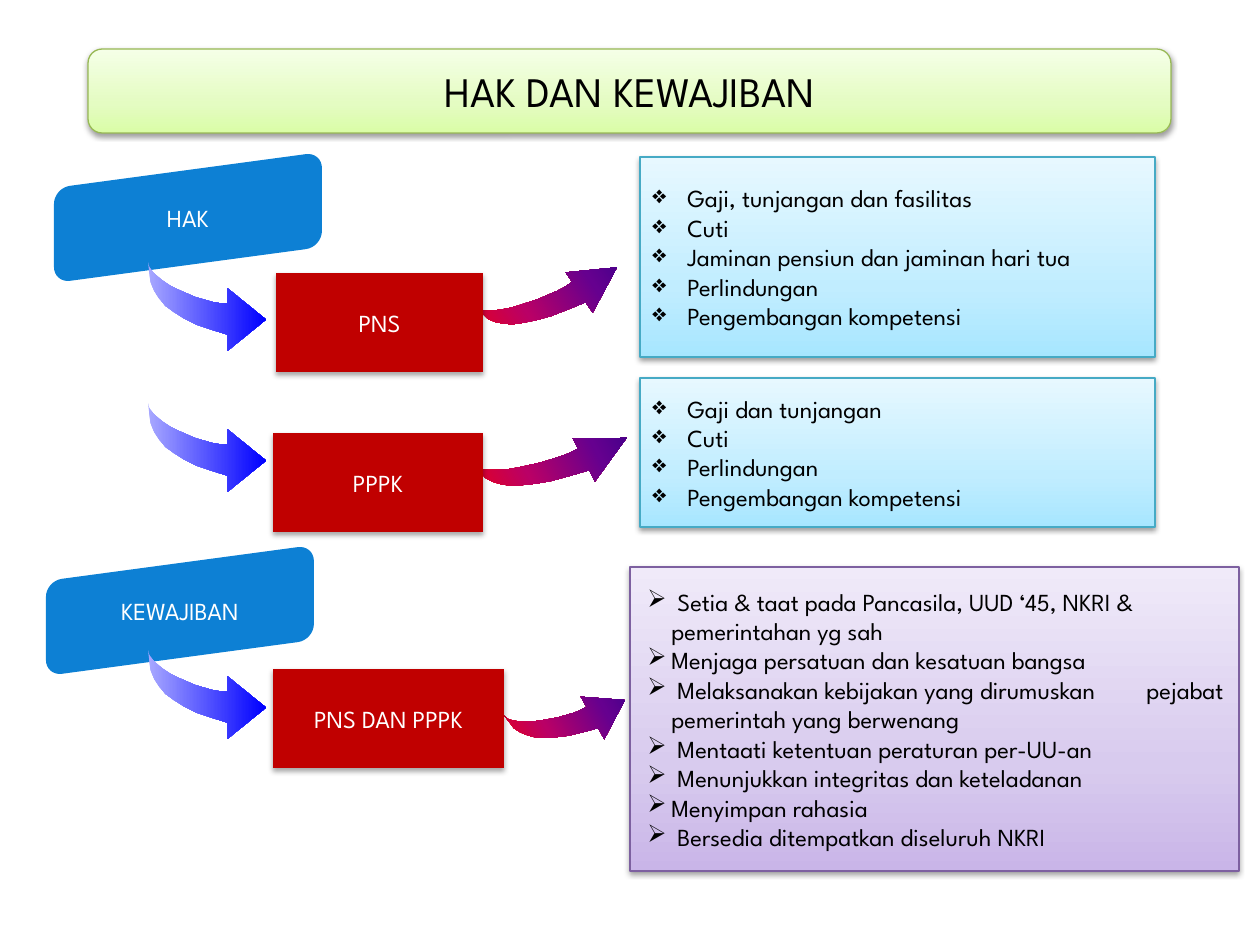
from math import cos, pi, sin

from lxml import etree
from pptx import Presentation
from pptx import util as u
from pptx.dml import color
from pptx.enum import shapes, text
from pptx.oxml import ns

PX = 914400 // 126
FONT = "League Spartan"
GREEN = [(0, "F5FFE7"), (65, "E4FCC2"), (100, "DAFDA7")]
CYAN = [(0, "E7F8FF"), (65, "C1EDFF"), (100, "A7E6FF")]
PURPLE = [(0, "F0EAF9"), (65, "D8CBEE"), (100, "C9B5E8")]
BLUE_ARROW = [(0, "A8A8FF"), (100, "0000FF")]
RED_ARROW = [(0, "F00010"), (35, "BA0066"), (70, "66008F"), (100, "300088")]
ARROW_WIDTH, ARROW_HEIGHT = 95, 71
ARROW_OUTLINE = [
    (0, 0), (1, 8), (2, 16), (5, 23), (9, 29), (14, 35), (21, 40), (29, 45),
    (39, 50), (51, 54), (64, 58), (64, 71), (95, 46), (64, 21), (64, 33),
    (58, 33), (52, 32), (45, 30), (38, 28), (31, 25), (24, 22), (18, 19),
    (12, 15), (7, 11), (4, 8), (1, 4),
]
PNS_RIGHTS = [
    " Gaji, tunjangan dan fasilitas", " Cuti",
    " Jaminan pensiun dan jaminan hari tua", " Perlindungan",
    " Pengembangan kompetensi",
]
PPPK_RIGHTS = [
    " Gaji dan tunjangan", " Cuti", " Perlindungan", " Pengembangan kompetensi",
]
DUTIES = [
    " Setia & taat pada Pancasila, UUD ‘45, NKRI & \tpemerintahan yg sah",
    "Menjaga persatuan dan kesatuan bangsa",
    " Melaksanakan kebijakan yang dirumuskan \tpejabat pemerintah yang berwenang",
    " Mentaati ketentuan peraturan per-UU-an",
    " Menunjukkan integritas dan keteladanan",
    "Menyimpan rahasia",
    " Bersedia ditempatkan diseluruh NKRI",
]


def rgb(value):
    """Turn a hex string into a colour."""
    return color.RGBColor.from_string(value)


def add_xml(parent, tag, **attributes):
    """Append a drawing element with attributes."""
    values = {name: str(value) for name, value in attributes.items()}
    return etree.SubElement(parent, ns.qn(f"a:{tag}"), values)


def paint(shape, fill, line=None, angle=270):
    """Fill a shape with one colour or a gradient and set its outline."""
    shape.shadow.inherit = False
    if isinstance(fill, str):
        shape.fill.solid()
        shape.fill.fore_color.rgb = rgb(fill)
    else:
        shape.fill.gradient()
        shape.fill.gradient_angle = angle
        stops = shape._element.spPr.find(".//" + ns.qn("a:gsLst"))
        for stop in list(stops):
            stops.remove(stop)
        for position, value in fill:
            stop = add_xml(stops, "gs", pos=position * 1000)
            add_xml(stop, "srgbClr", val=value)
    if line:
        shape.line.color.rgb = rgb(line)
        shape.line.width = u.Pt(0.75)
    else:
        shape.line.fill.background()


def add_shadow(shape, opacity):
    """Give a shape a soft shadow below it."""
    effects = shape._element.spPr.find(ns.qn("a:effectLst"))
    shadow = add_xml(effects, "outerShdw", blurRad=u.Pt(3.1), dist=u.Pt(1.6),
                     dir=5400000, rotWithShape=0)
    add_xml(add_xml(shadow, "srgbClr", val="000000"), "alpha", val=opacity * 1000)


def write(shape, lines, size=14, ink="FFFFFF", bullet=None, hanging=0):
    """Write centred lines, or a bulleted list with a hanging indent."""
    frame = shape.text_frame
    frame.word_wrap = True
    frame.vertical_anchor = text.MSO_ANCHOR.MIDDLE
    for index, line in enumerate(lines):
        paragraph = frame.add_paragraph() if index else frame.paragraphs[0]
        paragraph.alignment = text.PP_ALIGN.LEFT if bullet else text.PP_ALIGN.CENTER
        run = paragraph.add_run()
        run.text = line
        run.font.name = FONT
        run.font.size = u.Pt(size)
        run.font.color.rgb = rgb(ink)
        if bullet:
            properties = paragraph._p.get_or_add_pPr()
            properties.set("marL", str(29 * PX))
            properties.set("indent", str(-hanging * PX))
            add_xml(properties, "buChar", char=bullet)


def add_box(slide, kind, box, fill, line=None, opacity=38):
    """Add a shadowed preset shape."""
    shape = slide.shapes.add_shape(kind, *(value * PX for value in box))
    paint(shape, fill, line)
    add_shadow(shape, opacity)
    return shape


def add_outline(slide, points):
    """Add a closed freeform through points in px."""
    points = [(round(x * PX), round(y * PX)) for x, y in points]
    builder = slide.shapes.build_freeform(*points[0])
    builder.add_line_segments(points[1:], close=True)
    return builder.convert_to_shape()


def add_card(slide, left, top, label):
    """Add a rounded card whose right side is raised."""
    width, height, rise, radius, steps = 268, 95, 36, 16, 8
    corners = [(width - radius, height - radius), (radius, height - radius),
               (radius, radius), (width - radius, radius)]
    points = []
    for quarter, (x, y) in enumerate(corners):
        for step in range(steps + 1):
            turn = (quarter + step / steps) * pi / 2
            across = x + radius * cos(turn)
            down = y + radius * sin(turn) + rise * (1 - across / width)
            points.append((left + across, top + down))
    card = add_outline(slide, points)
    paint(card, "0D80D4")
    write(card, [label])


def add_arrow(slide, box, stops, rotation=0):
    """Add a curved arrow scaled to its box and then turned."""
    left, top, width, height = box
    arrow = add_outline(slide, [
        (left + x * width / ARROW_WIDTH, top + y * height / ARROW_HEIGHT)
        for x, y in ARROW_OUTLINE])
    paint(arrow, stops, angle=0)
    arrow.rotation = rotation


def main():
    """Build the slide of rights and duties."""
    presentation = Presentation()
    presentation.slide_width, presentation.slide_height = u.Inches(10), u.Inches(7.5)
    slide = presentation.slides.add_slide(presentation.slide_layouts[6])
    process = shapes.MSO_SHAPE.FLOWCHART_PROCESS

    add_card(slide, 54, 152, "HAK")
    add_card(slide, 46, 545, "KEWAJIBAN")
    title = add_box(slide, shapes.MSO_SHAPE.ROUNDED_RECTANGLE,
                    (88, 49, 1083, 84), GREEN, "98B955")
    write(title, ["HAK DAN KEWAJIBAN"], size=24, ink="000000")

    for box, stops, line, lines, bullet, hanging in [
        ((630, 567, 609, 304), PURPLE, "7D60A0", DUTIES, "➢", 24),
        ((640, 157, 515, 200), CYAN, "46AAC5", PNS_RIGHTS, "❖", 29),
        ((640, 378, 515, 149), CYAN, "46AAC5", PPPK_RIGHTS, "❖", 29),
    ]:
        panel = add_box(slide, process, box, stops, line)
        write(panel, lines, ink="000000", bullet=bullet, hanging=hanging)

    for top in (262, 403, 650):
        add_arrow(slide, (148, top, 118, 89), BLUE_ARROW)
    for box, rotation in [
        ((484, 263, 139, 69), 326.2),
        ((483, 428, 147, 69), 332.8),
        ((514, 684, 113, 69), 331),
    ]:
        add_arrow(slide, box, RED_ARROW, rotation)

    for left, top, width, label in [
        (276, 273, 207, "PNS"),
        (273, 433, 210, "PPPK"),
        (273, 669, 231, "PNS DAN PPPK"),
    ]:
        group = add_box(slide, process, (left, top, width, 99), "C00000", opacity=35)
        write(group, [label])

    presentation.save("out.pptx")


if __name__ == "__main__":
    main()
